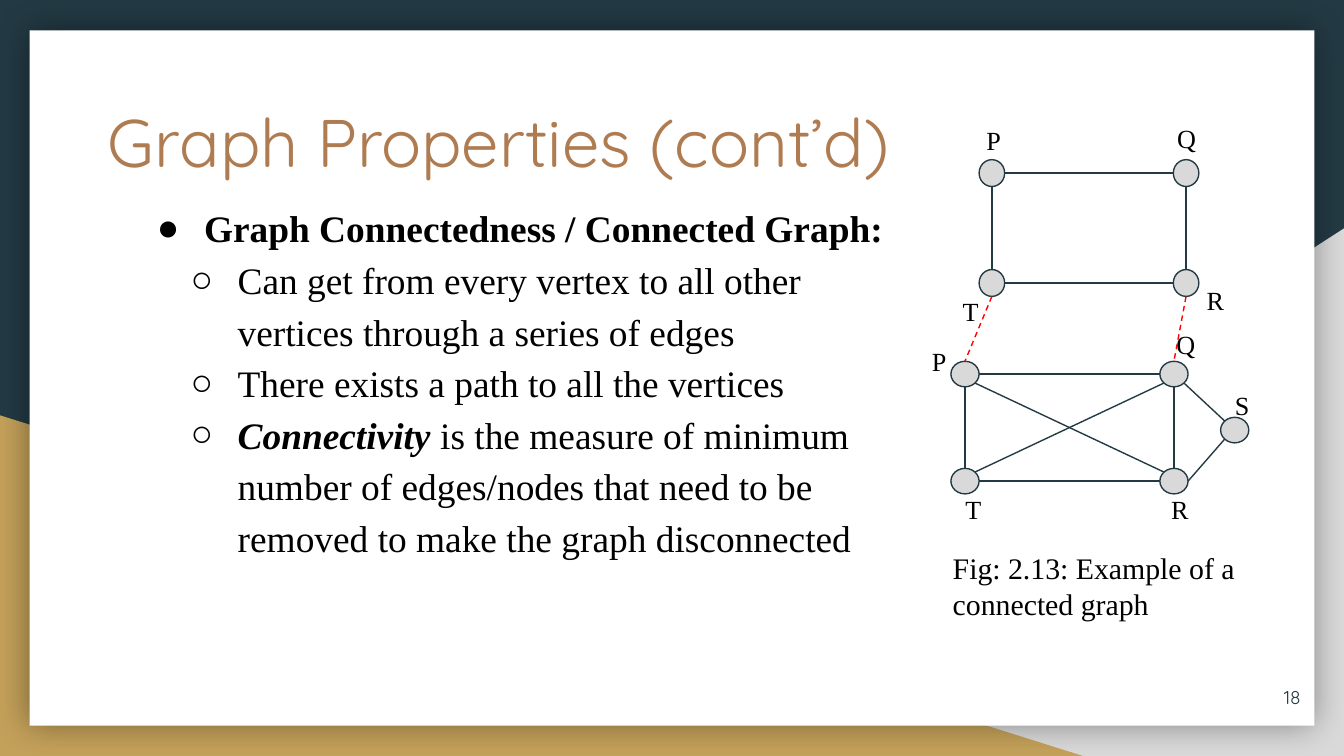
"""Build the slide on connected graphs, on a grid of 100 columns by 56.25 rows."""
import math
from dataclasses import dataclass
from typing import NamedTuple

import lxml.etree
import pptx
import pptx.dml.color
import pptx.enum.dml
import pptx.enum.shapes
import pptx.enum.text
import pptx.oxml
import pptx.oxml.ns
import pptx.util

COLUMNS, ROWS = 100, 56.25
SHAPES = pptx.enum.shapes.MSO_SHAPE
ALIGN = pptx.enum.text.PP_ALIGN
ANCHOR = pptx.enum.text.MSO_ANCHOR


@dataclass(frozen=True)
class Theme:
    dark: str = "233A44"
    gold: str = "C4A15A"
    grey: str = "D9D9D9"
    white: str = "FFFFFF"
    copper: str = "AF7B51"
    black: str = "000000"
    red: str = "FF0000"
    heading_font: str = "Quicksand"
    body_font: str = "Times New Roman"
    title_size: float = 36
    body_size: float = 20
    caption_size: float = 16
    label_size: float = 14
    number_size: float = 10
    line_width: float = 0.75


class Area(NamedTuple):
    column: float
    row: float
    columns: float
    rows: float


class Span(NamedTuple):
    text: str
    bold: bool = False
    italic: bool = False


class Bullet(NamedTuple):
    mark: str
    level: int
    indent: float
    space_before: float
    spans: tuple[Span, ...]


class Node(NamedTuple):
    column: float
    row: float
    label_column: float
    label_row: float


class Edge(NamedTuple):
    start: str
    start_side: str
    end: str
    end_side: str


@dataclass(frozen=True)
class Graph:
    node_columns: float
    node_rows: float
    nodes: dict[str, Node]
    edges: tuple[Edge, ...]

    def point(self, name: str, side: str) -> tuple[float, float]:
        """Return the place on a node's outline at a compass side."""
        node, angle = self.nodes[name], math.radians(SIDES.index(side) * 45)
        return (node.column + self.node_columns / 2 * math.cos(angle),
                node.row + self.node_rows / 2 * math.sin(angle))


THEME = Theme()
SIDES = ("E", "SE", "S", "SW", "W", "NW", "N", "NE")
RECTANGLE = (Edge("Q", "W", "P", "E"), Edge("R", "W", "T", "E"),
             Edge("R", "N", "Q", "S"), Edge("T", "N", "P", "S"))
UPPER = Graph(1.9, 2, {
    "P": Node(73.8, 12.88, 72.4, 8.25), "Q": Node(88.25, 12.88, 86.6, 8.1),
    "T": Node(73.8, 21.06, 70.65, 21), "R": Node(88.25, 21.06, 88.8, 20.15),
}, RECTANGLE)
LOWER = Graph(2.1, 1.9, {
    "P": Node(71.8, 27.83, 68.35, 24.7), "Q": Node(87.35, 27.83, 86.55, 23.45),
    "T": Node(71.8, 35.8, 70.85, 35.7), "R": Node(87.35, 35.8, 86.15, 35.7),
    "S": Node(91.87, 32, 90.9, 27.95),
}, RECTANGLE + (Edge("R", "NW", "P", "SE"), Edge("T", "NE", "Q", "SW"),
                Edge("R", "E", "S", "SW"), Edge("Q", "SE", "S", "NW")))
BRIDGES = (("T", "P"), ("R", "Q"))
BULLETS = (
    Bullet("●", 0, 0.75, 6, (Span("Graph Connectedness / Connected Graph:", bold=True),)),
    Bullet("○", 1, 1, 0, (Span("Can get from every vertex to all other vertices "
                               "through a series of edges"),)),
    Bullet("○", 1, 1, 0, (Span("There exists a path to all the vertices"),)),
    Bullet("○", 1, 1, 0, (Span("Connectivity", bold=True, italic=True),
                          Span(" is the measure of minimum number of edges/nodes that "
                               "need to be removed to make the graph disconnected"))),
)


def grid(cells: float) -> int:
    """Turn grid cells into a slide length."""
    return pptx.util.Inches(cells * 10 / COLUMNS)


def rgb(color: str) -> pptx.dml.color.RGBColor:
    """Turn a hex colour into a colour object."""
    return pptx.dml.color.RGBColor.from_string(color)


def add_figure(page, kind, area: Area, color: str, outline: str | None = None):
    """Draw a filled preset shape."""
    shape = page.shapes.add_shape(kind, *map(grid, area))
    shape.shadow.inherit = False
    shape.fill.solid()
    shape.fill.fore_color.rgb = rgb(color)
    if outline:
        shape.line.color.rgb = rgb(outline)
        shape.line.width = pptx.util.Pt(THEME.line_width)
    else:
        shape.line.fill.background()
    return shape


def add_glow_shadow(shape, blur: float, opacity: int) -> None:
    """Give a shape a soft black shadow on all sides."""
    effects = shape._element.spPr.find(pptx.oxml.ns.qn("a:effectLst"))
    effects.append(pptx.oxml.parse_xml(
        f'<a:outerShdw {pptx.oxml.ns.nsdecls("a")} blurRad="{pptx.util.Pt(blur)}" dist="0" '
        f'algn="ctr" rotWithShape="0"><a:srgbClr val="{THEME.black}">'
        f'<a:alpha val="{opacity * 1000}"/></a:srgbClr></a:outerShdw>'))


def add_line(page, start: tuple[float, float], end: tuple[float, float],
             color: str = THEME.dark, dashed: bool = False) -> None:
    """Draw a straight line between two grid places."""
    line = page.shapes.add_connector(pptx.enum.shapes.MSO_CONNECTOR.STRAIGHT,
                                     *map(grid, start + end))
    line.line.color.rgb = rgb(color)
    line.line.width = pptx.util.Pt(THEME.line_width)
    if dashed:
        line.line.dash_style = pptx.enum.dml.MSO_LINE.DASH
    lxml.etree.SubElement(line._element.spPr, pptx.oxml.ns.qn("a:effectLst"))


def add_span(para, span: Span, font: str, size: float, color: str) -> None:
    """Add a formatted run to a paragraph."""
    run = para.add_run()
    run.text = span.text
    run.font.name, run.font.size = font, pptx.util.Pt(size)
    run.font.bold, run.font.italic = span.bold, span.italic
    run.font.color.rgb = rgb(color)


def add_text(page, area: Area, text: str = "", *, size: float, font: str = THEME.body_font,
             color: str = THEME.black, align=ALIGN.LEFT, anchor=ANCHOR.TOP):
    """Add a wrapped text box and return its frame."""
    frame = page.shapes.add_textbox(*map(grid, area)).text_frame
    frame.word_wrap, frame.vertical_anchor = True, anchor
    frame.margin_left = frame.margin_right = grid(1)
    frame.margin_top = frame.margin_bottom = grid(1)
    para = frame.paragraphs[0]
    para.alignment = align
    if text:
        add_span(para, Span(text), font, size, color)
    return frame


def add_bullets(page, area: Area, bullets: tuple[Bullet, ...]) -> None:
    """Write the bulleted body text."""
    frame = add_text(page, area, size=THEME.body_size)
    for index, bullet in enumerate(bullets):
        para = frame.add_paragraph() if index else frame.paragraphs[0]
        para.level, para.line_spacing = bullet.level, 1.15
        para.space_before = pptx.util.Pt(bullet.space_before)
        properties = para._p.get_or_add_pPr()
        properties.set("marL", str(pptx.util.Inches(bullet.indent)))
        properties.set("indent", str(pptx.util.Inches(-0.35)))
        color = lxml.etree.SubElement(properties, pptx.oxml.ns.qn("a:buClr"))
        lxml.etree.SubElement(color, pptx.oxml.ns.qn("a:srgbClr"), val=THEME.black)
        lxml.etree.SubElement(properties, pptx.oxml.ns.qn("a:buFont"), typeface=THEME.body_font)
        lxml.etree.SubElement(properties, pptx.oxml.ns.qn("a:buChar"), char=bullet.mark)
        for span in bullet.spans:
            add_span(para, span, THEME.body_font, THEME.body_size, THEME.black)


def add_graph(page, graph: Graph) -> None:
    """Draw the nodes, labels and edges of a graph."""
    width, height = graph.node_columns, graph.node_rows
    for name, node in graph.nodes.items():
        area = Area(node.column - width / 2, node.row - height / 2, width, height)
        add_figure(page, SHAPES.OVAL, area, THEME.grey, THEME.dark)
        add_text(page, Area(node.label_column, node.label_row, 3.3, 3.1), name,
                 size=THEME.label_size)
    for edge in graph.edges:
        add_line(page, graph.point(edge.start, edge.start_side),
                 graph.point(edge.end, edge.end_side))


def main() -> None:
    """Build and save the deck."""
    deck = pptx.Presentation()
    deck.slide_width, deck.slide_height = grid(COLUMNS), grid(ROWS)
    page = deck.slides.add_slide(deck.slide_layouts[6])
    page.background.fill.solid()
    page.background.fill.fore_color.rgb = rgb(THEME.dark)
    corner = add_figure(page, SHAPES.RIGHT_TRIANGLE, Area(39.2, 17, 60.8, ROWS - 17), THEME.grey)
    corner._element.spPr.find(pptx.oxml.ns.qn("a:xfrm")).set("flipH", "1")
    add_figure(page, SHAPES.RIGHT_TRIANGLE, Area(0, 30.9, 80.6, ROWS - 30.9), THEME.gold)
    card = add_figure(page, SHAPES.RECTANGLE, Area(2.2, 2.25, 95.6, 51.75), THEME.white)
    add_glow_shadow(card, blur=18, opacity=40)
    add_text(page, Area(7.05, 6.5, 61, 6.8), "Graph Properties (cont’d)", size=THEME.title_size,
             font=THEME.heading_font, color=THEME.copper)
    add_bullets(page, Area(6.7, 13.8, 61.3, 33.2), BULLETS)
    for graph in (UPPER, LOWER):
        add_graph(page, graph)
    for upper, lower in BRIDGES:
        add_line(page, UPPER.point(upper, "S"), LOWER.point(lower, "N"), THEME.red, dashed=True)
    add_text(page, Area(91.75, 49.75, 6, 4.3), "18", size=THEME.number_size,
             font=THEME.heading_font, color=THEME.dark, align=ALIGN.RIGHT, anchor=ANCHOR.MIDDLE)
    add_text(page, Area(69.9, 39.9, 24.9, 7.2), "Fig: 2.13: Example of a connected graph",
             size=THEME.caption_size)
    deck.save("out.pptx")


if __name__ == "__main__":
    main()
